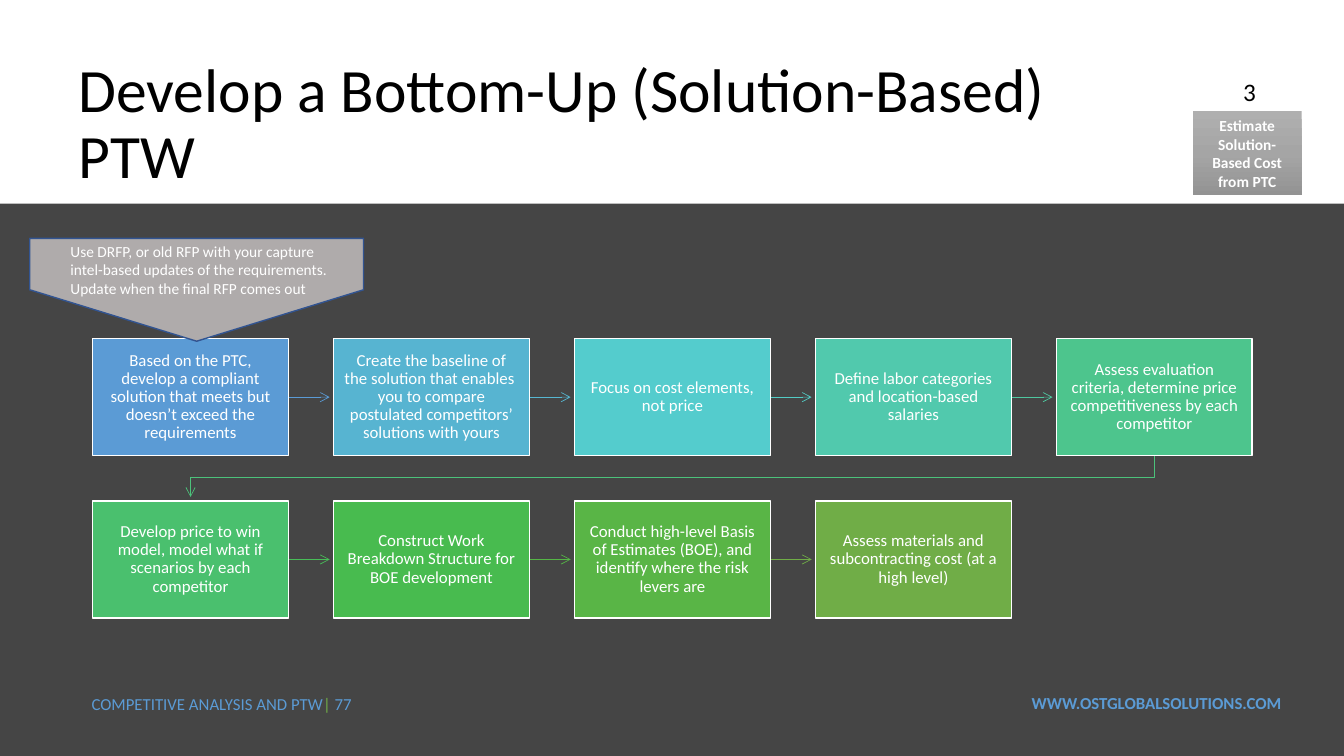
from copy import deepcopy

from lxml.etree import SubElement
from pptx import Presentation
from pptx.dml.color import RGBColor
from pptx.enum.shapes import MSO_CONNECTOR as Connector, MSO_SHAPE as Shape
from pptx.enum.text import MSO_ANCHOR as Anchor, PP_ALIGN as Align
from pptx.oxml.ns import qn
from pptx.util import Inches, Pt

WHITE = RGBColor(0xFF, 0xFF, 0xFF)
BLACK = RGBColor(0x00, 0x00, 0x00)
CHARCOAL = RGBColor(0x45, 0x45, 0x45)
BLUE = RGBColor(0x5B, 0x9B, 0xD5)
NAVY = RGBColor(0x32, 0x54, 0x91)
GREEN = RGBColor(0x70, 0xAD, 0x47)
GREY = RGBColor(0xAF, 0xAB, 0xAB)
BADGE_GREYS = [(0, RGBColor(0xAF, 0xAF, 0xAF)),
               (0.5, RGBColor(0xA5, 0xA5, 0xA5)),
               (1, RGBColor(0x93, 0x93, 0x93))]

# Text, box colour, colour of the arrow to the next step
STEPS = [
    ("Based on the PTC, develop a compliant solution that meets but doesn’t exceed the requirements",
     BLUE, BLUE),
    ("Create the baseline of the solution that enables  you to compare postulated competitors’ "
     "solutions with yours", RGBColor(0x57, 0xB4, 0xD1), RGBColor(0x57, 0xB7, 0xD1)),
    ("Focus on cost elements, not price",
     RGBColor(0x54, 0xCC, 0xCD), RGBColor(0x53, 0xCC, 0xC5)),
    ("Define labor categories and location-based salaries",
     RGBColor(0x51, 0xC9, 0xAD), RGBColor(0x4F, 0xC7, 0xA0)),
    ("Assess evaluation criteria, determine price competitiveness by each competitor",
     RGBColor(0x4D, 0xC5, 0x8D), RGBColor(0x4C, 0xC2, 0x7B)),
    ("Develop price to win model, model what if scenarios by each competitor",
     RGBColor(0x4A, 0xC0, 0x6E), RGBColor(0x48, 0xBD, 0x58)),
    ("Construct Work Breakdown Structure for BOE development",
     RGBColor(0x48, 0xBB, 0x4F), RGBColor(0x55, 0xB6, 0x46)),
    ("Conduct high-level Basis of Estimates (BOE), and identify where the risk levers are",
     RGBColor(0x59, 0xB5, 0x46), GREEN),
    ("Assess materials and subcontracting cost (at a high level)", GREEN, None),
]
COLUMNS = 5
LEFT, TOP = 0.92, 3.36
STEP_WIDTH, STEP_HEIGHT = 1.94, 1.16
COLUMN_PITCH, ROW_PITCH = 2.39, 1.61
ARROW_LENGTH = 0.41


class Page:
    font = "Calibri"

    def __init__(self, deck):
        self.slide = deck.slides.add_slide(deck.slide_layouts[6])
        self.shapes = self.slide.shapes
        fill = self.slide.background.fill
        fill.solid()
        fill.fore_color.rgb = CHARCOAL

    def set_text(self, frame, paragraphs, size, color=WHITE, bold=False,
                 align=Align.LEFT, anchor=Anchor.TOP, spacing=1.0):
        """Fill a text frame; each paragraph is a string or a list of (text, colour)."""
        frame.word_wrap = True
        frame.vertical_anchor = anchor
        for index, content in enumerate(paragraphs):
            para = frame.paragraphs[0] if index == 0 else frame.add_paragraph()
            para.alignment = align
            para.line_spacing = spacing
            para.font.name = self.font
            para.font.size = Pt(size)
            para.font.bold = bold
            spans = [(content, color)] if isinstance(content, str) else content
            for text, span_color in spans:
                span = para.add_run()
                span.text = text
                span.font.color.rgb = span_color

    def text(self, left, top, width, height, paragraphs, size, **style):
        box = self.shapes.add_textbox(Inches(left), Inches(top), Inches(width), Inches(height))
        self.set_text(box.text_frame, paragraphs, size, **style)

    def shape(self, kind, left, top, width, height, fill=None, line=None):
        shape = self.shapes.add_shape(kind, Inches(left), Inches(top),
                                      Inches(width), Inches(height))
        shape.shadow.inherit = False
        if fill is not None:
            shape.fill.solid()
            shape.fill.fore_color.rgb = fill
        if line is None:
            shape.line.fill.background()
        else:
            shape.line.color.rgb = line
            shape.line.width = Pt(1)
        return shape

    def step(self, left, top, text, fill):
        frame = self.shape(Shape.RECTANGLE, left, top, STEP_WIDTH, STEP_HEIGHT,
                           fill, WHITE).text_frame
        frame.margin_left = frame.margin_right = Inches(0.1)
        frame.margin_top = frame.margin_bottom = Inches(0.1)
        self.set_text(frame, [text], 12, align=Align.CENTER, anchor=Anchor.MIDDLE, spacing=0.9)

    def badge(self, left, top, width, height, text):
        badge = self.shape(Shape.RECTANGLE, left, top, width, height)
        badge.fill.gradient()
        badge.fill.gradient_angle = 270
        first = next(badge._element.iter(qn("a:gs")))
        first.addnext(deepcopy(first))
        for stop, (position, color) in zip(badge.fill.gradient_stops, BADGE_GREYS):
            stop.position = position
            stop.color.rgb = color
        self.set_text(badge.text_frame, [text], 11, bold=True,
                      align=Align.CENTER, anchor=Anchor.MIDDLE)

    def arrow(self, points, color):
        """Draw a thin arrow: a connector for two points, an open outline for more."""
        points = [(Inches(x), Inches(y)) for x, y in points]
        if len(points) == 2:
            arrow = self.shapes.add_connector(Connector.STRAIGHT, *points[0], *points[1])
        else:
            builder = self.shapes.build_freeform(*points[0])
            builder.add_line_segments(points[1:], close=False)
            arrow = builder.convert_to_shape()
            arrow.fill.background()
        arrow.line.color.rgb = color
        arrow.line.width = Pt(0.5)
        properties = arrow._element.spPr
        SubElement(properties.find(qn("a:ln")), qn("a:tailEnd"), type="arrow")
        SubElement(properties, qn("a:effectLst"))


def add_process(page):
    for index, (text, fill, arrow_color) in enumerate(STEPS):
        row, column = divmod(index, COLUMNS)
        left, top = LEFT + column * COLUMN_PITCH, TOP + row * ROW_PITCH
        right, middle = left + STEP_WIDTH, top + STEP_HEIGHT / 2
        if column == COLUMNS - 1:
            start, end = left + STEP_WIDTH / 2, LEFT + STEP_WIDTH / 2
            bottom = top + STEP_HEIGHT
            page.arrow([(start, bottom), (start, bottom + 0.22), (end, bottom + 0.22),
                        (end, bottom + ARROW_LENGTH)], arrow_color)
        elif arrow_color is not None:
            page.arrow([(right, middle), (right + ARROW_LENGTH, middle)], arrow_color)
        page.step(left, top, text, fill)


def main():
    deck = Presentation()
    deck.slide_width, deck.slide_height = Inches(13.33), Inches(7.5)
    page = Page(deck)

    page.text(9.39, 6.82, 3.42, 0.3, ["WWW.OSTGLOBALSOLUTIONS.COM"], 12,
              color=BLUE, bold=True, align=Align.RIGHT)
    page.text(0.81, 6.83, 4.82, 0.3,
              [[("COMPETITIVE ANALYSIS AND PTW", BLUE), ("| ", GREEN), ("77", BLUE)]], 12)

    page.shape(Shape.RECTANGLE, 0, 0, 13.33, 2.02, WHITE)
    page.text(0.68, 0.52, 10.48, 1.45, ["Develop a Bottom-Up (Solution-Based) PTW"], 44,
              color=BLACK, anchor=Anchor.MIDDLE, spacing=0.9)

    add_process(page)

    callout = page.shape(Shape.PENTAGON, 1.44, 1.22, 1.02, 3.31, GREY, NAVY)
    callout.rotation = 90
    page.text(0.6, 2.35, 2.84, 0.66,
              ["Use DRFP, or old RFP with your capture intel-based updates of the requirements.",
               "Update when the final RFP comes out"], 11)

    page.badge(11.83, 1.1, 1.08, 0.84, "Estimate Solution-Based Cost from PTC")
    page.text(12.23, 0.71, 0.85, 0.4, ["3"], 18, color=BLACK)

    deck.save("out.pptx")


if __name__ == "__main__":
    main()
